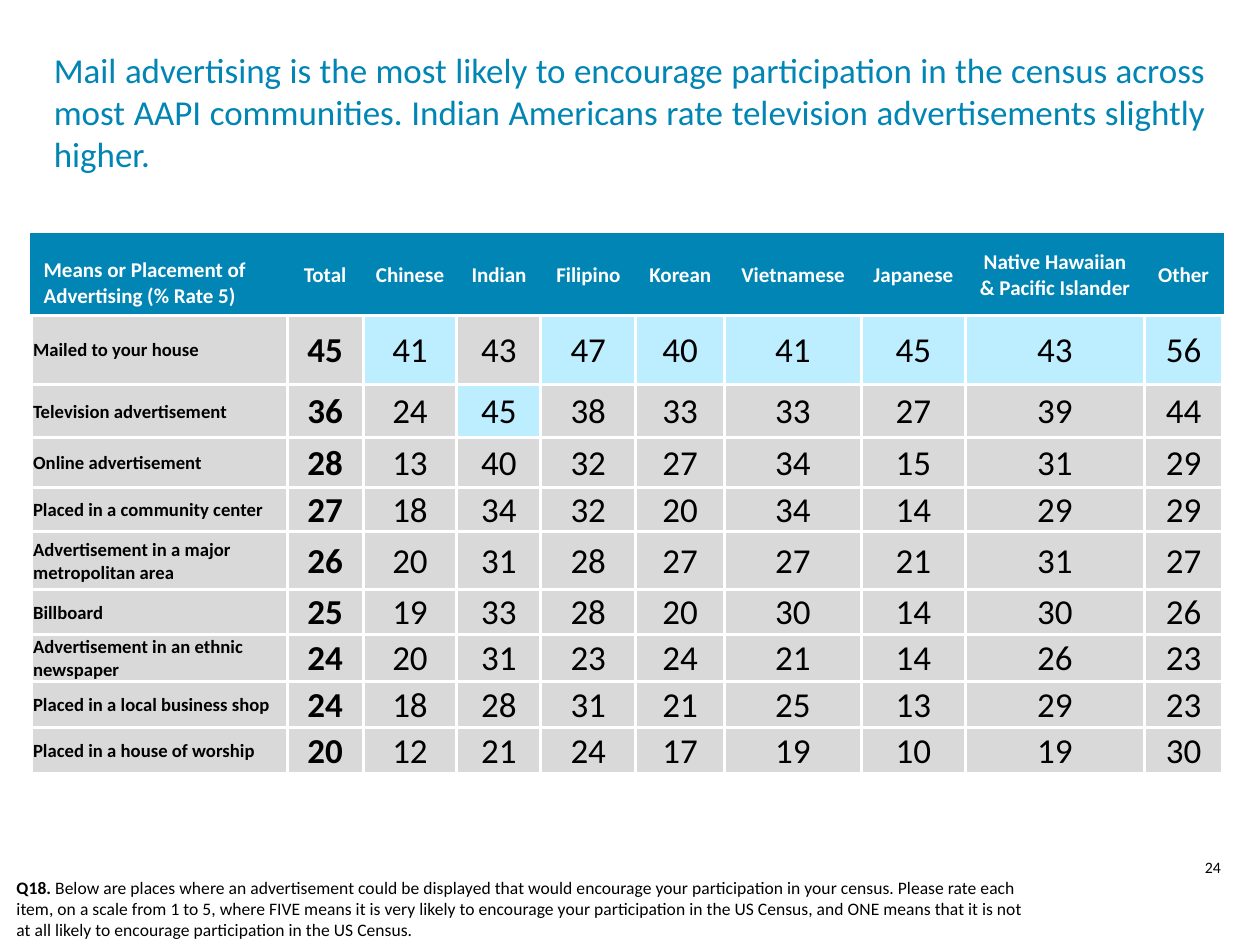
from lxml import etree
from pptx import Presentation
from pptx.dml.color import RGBColor
from pptx.enum import text
from pptx.oxml.ns import qn
from pptx.util import Cm, Pt

BLUE = RGBColor(0x00, 0x85, 0xB4)
LIGHT_BLUE = RGBColor(0xBD, 0xEE, 0xFF)
GREY = RGBColor(0xD9, 0xD9, 0xD9)
WHITE = RGBColor(0xFF, 0xFF, 0xFF)
BLACK = RGBColor(0x00, 0x00, 0x00)

HEADERS = ["Means or Placement of Advertising (% Rate 5)", "Total", "Chinese", "Indian",
           "Filipino", "Korean", "Vietnamese", "Japanese",
           "Native Hawaiian & Pacific Islander", "Other"]
RATINGS = [
    ("Mailed to your house", 45, 41, 43, 47, 40, 41, 45, 43, 56),
    ("Television advertisement", 36, 24, 45, 38, 33, 33, 27, 39, 44),
    ("Online advertisement", 28, 13, 40, 32, 27, 34, 15, 31, 29),
    ("Placed in a community center", 27, 18, 34, 32, 20, 34, 14, 29, 29),
    ("Advertisement in a major metropolitan area", 26, 20, 31, 28, 27, 27, 21, 31, 27),
    ("Billboard", 25, 19, 33, 28, 20, 30, 14, 30, 26),
    ("Advertisement in an ethnic newspaper", 24, 20, 31, 23, 24, 21, 14, 26, 23),
    ("Placed in a local business shop", 24, 18, 28, 31, 21, 25, 13, 29, 23),
    ("Placed in a house of worship", 20, 12, 21, 24, 17, 19, 10, 19, 30),
]
COL_WIDTHS = [3.86, 1.15, 1.42, 1.27, 1.43, 1.35, 2.06, 1.58, 2.7, 1.19]
ROW_HEIGHTS = [1.22, 1.04, 0.81, 0.75, 0.67, 0.88, 0.66, 0.71, 0.7, 0.7]


def style_font(p, size, color, bold=False):
    p.font.name = "Calibri"
    p.font.size = Pt(size)
    p.font.bold = bold
    p.font.color.rgb = color


def set_borders(cell, colors):
    """Draw 1.5 pt borders; colors are for the left, right, top and bottom sides."""
    tcPr = cell._tc.get_or_add_tcPr()
    for i, (side, color) in enumerate(zip("LRTB", colors)):
        ln = etree.Element(qn(f"a:ln{side}"), w=str(Pt(1.5)))
        fill = etree.SubElement(ln, qn("a:solidFill"))
        etree.SubElement(fill, qn("a:srgbClr"), val=str(color))
        tcPr.insert(i, ln)


prs = Presentation()
prs.slide_width, prs.slide_height = Cm(19.05), Cm(14.29)
s = prs.slides.add_slide(prs.slide_layouts[5])

# Title
title = s.shapes.title
title.left, title.top, title.width, title.height = Cm(0.56), Cm(0.58), Cm(17.93), Cm(2.21)
tf = title.text_frame
tf.text = ("Mail advertising is the most likely to encourage participation in the census across "
           "most AAPI communities. Indian Americans rate television advertisements slightly higher.")
tf.word_wrap = True
tf.auto_size = text.MSO_AUTO_SIZE.NONE
tf.vertical_anchor = text.MSO_ANCHOR.MIDDLE
tf.paragraphs[0].alignment = text.PP_ALIGN.JUSTIFY
style_font(tf.paragraphs[0], 15, BLUE)

# Ratings table: the top rating of each community is highlighted
table = s.shapes.add_table(len(ROW_HEIGHTS), len(COL_WIDTHS), Cm(0.48), Cm(3.55),
                           Cm(sum(COL_WIDTHS)), Cm(sum(ROW_HEIGHTS))).table
table.horz_banding = False
for column, width in zip(table.columns, COL_WIDTHS):
    column.width = Cm(width)
for row, height in zip(table.rows, ROW_HEIGHTS):
    row.height = Cm(height)

top_ratings = [max(column) for column in list(zip(*RATINGS))[2:]]
for i, values in enumerate([HEADERS] + RATINGS):
    for j, value in enumerate(values):
        cell = table.cell(i, j)
        cell.text = str(value)
        cell.vertical_anchor = text.MSO_ANCHOR.MIDDLE
        p = cell.text_frame.paragraphs[0]
        p.alignment = text.PP_ALIGN.CENTER if j else text.PP_ALIGN.LEFT
        cell.fill.solid()
        if i == 0:
            cell.margin_left = cell.margin_right = Cm(0.18)
            cell.margin_top = cell.margin_bottom = Cm(0.1)
            cell.fill.fore_color.rgb = BLUE
            style_font(p, 9, WHITE, True)
            set_borders(cell, [BLUE, BLUE, BLUE, WHITE])
        else:
            cell.margin_left = cell.margin_right = cell.margin_top = Cm(0.02)
            cell.margin_bottom = 0
            is_top = j > 1 and value == top_ratings[j - 2]
            cell.fill.fore_color.rgb = LIGHT_BLUE if is_top else GREY
            style_font(p, 15 if j else 8, BLACK, j < 2)
            set_borders(cell, [WHITE] * 4)
table.cell(0, 0).vertical_anchor = text.MSO_ANCHOR.BOTTOM

# Page number
tf = s.shapes.add_textbox(Cm(17.63), Cm(12.85), Cm(1.42), Cm(0.64)).text_frame
tf.word_wrap = True
tf.text = "24"
tf.paragraphs[0].alignment = text.PP_ALIGN.CENTER
style_font(tf.paragraphs[0], 6.8, BLACK)

# Survey question
tf = s.shapes.add_textbox(0, Cm(13.13), Cm(15.77), Cm(1.22)).text_frame
tf.word_wrap = True
p = tf.paragraphs[0]
style_font(p, 7.5, BLACK)
r = p.add_run()
r.text = "Q18. "
r.font.bold = True
p.add_run().text = (
    "Below are places where an advertisement could be displayed that would encourage your "
    "participation in your census. Please rate each item, on a scale from 1 to 5, where FIVE "
    "means it is very likely to encourage your participation in the US Census, and ONE means "
    "that it is not at all likely to encourage participation in the US Census.")

prs.save("out.pptx")
